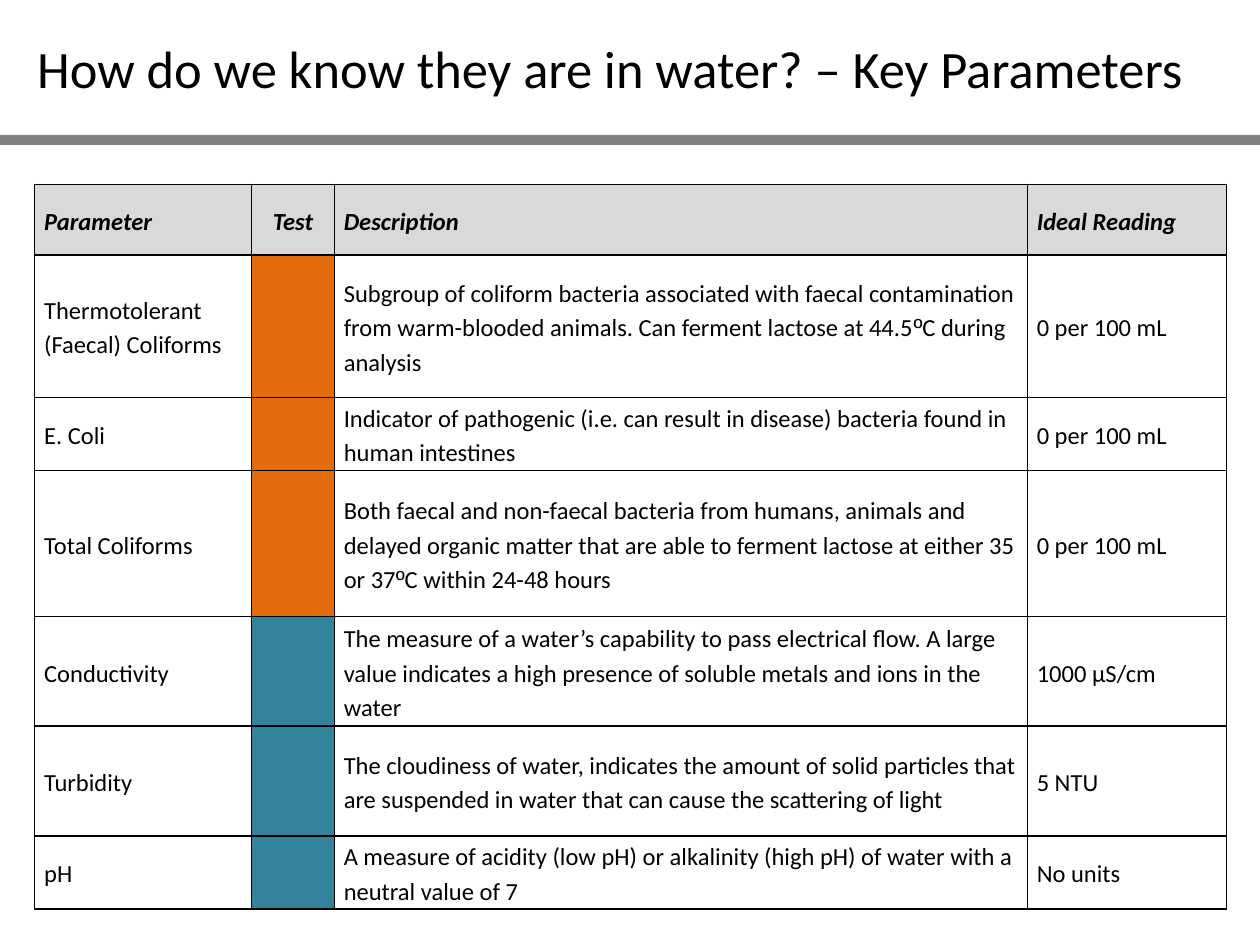
from lxml import etree
from pptx import Presentation
from pptx.dml.color import RGBColor
from pptx.enum.shapes import MSO_SHAPE
from pptx.enum.text import MSO_ANCHOR, MSO_AUTO_SIZE, PP_ALIGN
from pptx.oxml.ns import qn
from pptx.util import Cm, Pt

RECTANGLE = MSO_SHAPE.RECTANGLE
MIDDLE = MSO_ANCHOR.MIDDLE
FIT_SHAPE = MSO_AUTO_SIZE.SHAPE_TO_FIT_TEXT
LEFT, CENTER = PP_ALIGN.LEFT, PP_ALIGN.CENTER

BLACK, GREY, HEADER_GREY = "000000", "808080", "D9D9D9"
ORANGE, TEAL = "E36C0A", "31849B"
FONT, ORDINAL_FONT = "Calibri", "Arial"
ORDINAL = "º"

TITLE = "How do we know they are in water? – Key Parameters"
HEADERS = ["Parameter", "Test", "Description", "Ideal Reading"]
COLUMN_WIDTHS = [4.37, 1.67, 13.97, 4.01]
HEADER_HEIGHT = 1.42
PARAMETERS = [
    (2.87, ORANGE, "Thermotolerant (Faecal) Coliforms",
     "Subgroup of coliform bacteria associated with faecal contamination from "
     "warm-blooded animals. Can ferment lactose at 44.5ºC during analysis",
     "0 per 100 mL"),
    (1.47, ORANGE, "E. Coli",
     "Indicator of pathogenic (i.e. can result in disease) bacteria found in "
     "human intestines",
     "0 per 100 mL"),
    (2.95, ORANGE, "Total Coliforms",
     "Both faecal and non-faecal bacteria from humans, animals and delayed "
     "organic matter that are able to ferment lactose at either 35 or 37ºC "
     "within 24-48 hours",
     "0 per 100 mL"),
    (2.21, TEAL, "Conductivity",
     "The measure of a water’s capability to pass electrical flow. A large value "
     "indicates a high presence of soluble metals and ions in the water",
     "1000 μS/cm"),
    (2.21, TEAL, "Turbidity",
     "The cloudiness of water, indicates the amount of solid particles that are "
     "suspended in water that can cause the scattering of light",
     "5 NTU"),
    (1.47, TEAL, "pH",
     "A measure of acidity (low pH) or alkalinity (high pH) of water with a "
     "neutral value of 7",
     "No units"),
]


def color(value):
    return RGBColor.from_string(value)


def set_font(font, size, bold=False, italic=False):
    font.name = FONT
    font.size = Pt(size)
    font.bold = bold
    font.italic = italic
    font.color.rgb = color(BLACK)


def add_title(slide, left, top, width, height):
    shape = slide.shapes.add_textbox(Cm(left), Cm(top), Cm(width), Cm(height))
    frame = shape.text_frame
    frame.word_wrap = True
    frame.auto_size = FIT_SHAPE
    paragraph = frame.paragraphs[0]
    paragraph.text = TITLE
    set_font(paragraph.font, 30)


def add_divider(slide, left, top, width, height):
    shape = slide.shapes.add_shape(RECTANGLE, Cm(left), Cm(top), Cm(width), Cm(height))
    shape.shadow.inherit = False
    shape.fill.solid()
    shape.fill.fore_color.rgb = color(GREY)
    shape.line.fill.background()


def format_cell(cell, fill=None):
    properties = cell._tc.get_or_add_tcPr()
    for side in ("a:lnL", "a:lnR", "a:lnT", "a:lnB"):
        line = etree.SubElement(properties, qn(side), w=str(Pt(1)))
        solid = etree.SubElement(line, qn("a:solidFill"))
        etree.SubElement(solid, qn("a:srgbClr"), val=BLACK)
    if fill:
        cell.fill.solid()
        cell.fill.fore_color.rgb = color(fill)
    else:
        cell.fill.background()
    cell.vertical_anchor = MIDDLE
    cell.margin_left = cell.margin_right = Cm(0.19)
    cell.margin_top = cell.margin_bottom = 0


def write_cell(cell, text, header=False, alignment=LEFT):
    paragraph = cell.text_frame.paragraphs[0]
    paragraph.alignment = alignment
    paragraph.line_spacing = 1.15
    set_font(paragraph.font, 14, header, header)
    before, ordinal, after = text.partition(ORDINAL)
    for part in filter(None, (before, ordinal, after)):
        run = paragraph.add_run()
        run.text = part
        if part == ORDINAL:
            run.font.name = ORDINAL_FONT


def add_parameter_table(slide, left, top):
    heights = [HEADER_HEIGHT] + [parameter[0] for parameter in PARAMETERS]
    table = slide.shapes.add_table(
        len(heights), len(HEADERS), Cm(left), Cm(top),
        Cm(sum(COLUMN_WIDTHS)), Cm(sum(heights))).table
    table.first_row = table.horz_banding = False
    for column, width in zip(table.columns, COLUMN_WIDTHS):
        column.width = Cm(width)
    for row, height in zip(table.rows, heights):
        row.height = Cm(height)
    for cell, text in zip(table.rows[0].cells, HEADERS):
        format_cell(cell, HEADER_GREY)
        write_cell(cell, text, True, CENTER if text == "Test" else LEFT)
    for index, (_, test_color, name, description, reading) in enumerate(PARAMETERS, 1):
        for cell, text in zip(table.rows[index].cells, (name, "", description, reading)):
            format_cell(cell, None if text else test_color)
            write_cell(cell, text)


def main():
    presentation = Presentation()
    presentation.slide_width = Cm(25.4)
    presentation.slide_height = Cm(19.05)
    slide = presentation.slides.add_slide(presentation.slide_layouts[6])
    add_divider(slide, 0, 2.72, 25.4, 0.2)
    add_title(slide, 0.5, 0.6, 23.78, 1.54)
    add_parameter_table(slide, 0.7, 3.72)
    presentation.save("out.pptx")


if __name__ == "__main__":
    main()
